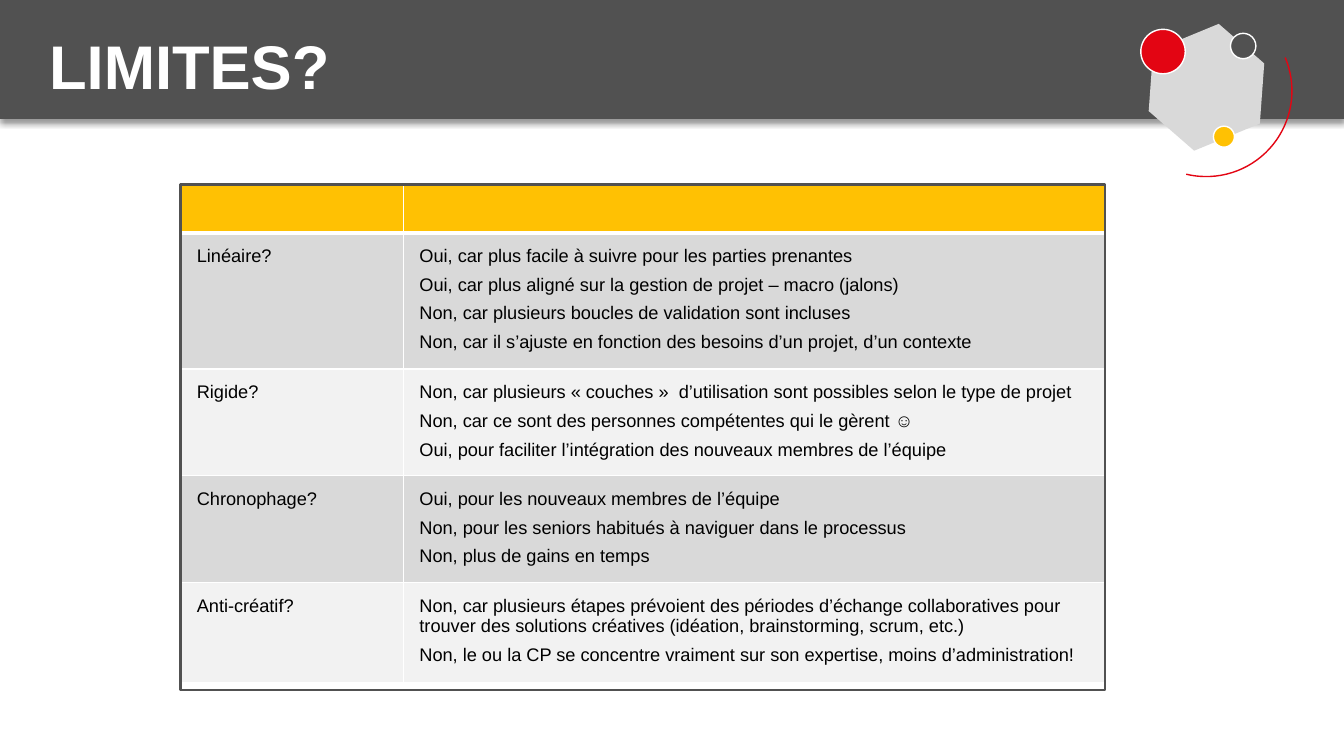
import lxml.etree
import pptx
import pptx.dml.color
import pptx.enum.shapes
import pptx.oxml.ns
import pptx.util

Cm = pptx.util.Cm
Pt = pptx.util.Pt
SHAPES = pptx.enum.shapes.MSO_SHAPE

RED, YELLOW, WHITE, BLACK = "E30513", "FFC103", "FFFFFF", "000000"
DARK, GREY, LIGHT = "515151", "D9D9D9", "F2F2F2"

LIMITS = [
    ("Linéaire?", [
        "Oui, car plus facile à suivre pour les parties prenantes",
        "Oui, car plus aligné sur la gestion de projet – macro (jalons)",
        "Non, car plusieurs boucles de validation sont incluses",
        "Non, car il s’ajuste en fonction des besoins d’un projet, d’un contexte",
    ]),
    ("Rigide?", [
        "Non, car plusieurs « couches »  d’utilisation sont possibles selon le type de projet",
        "Non, car ce sont des personnes compétentes qui le gèrent ☺",
        "Oui, pour faciliter l’intégration des nouveaux membres de l’équipe",
    ]),
    ("Chronophage?", [
        "Oui, pour les nouveaux membres de l’équipe",
        "Non, pour les seniors habitués à naviguer dans le processus",
        "Non, plus de gains en temps",
    ]),
    ("Anti-créatif?", [
        "Non, car plusieurs étapes prévoient des périodes d’échange collaboratives pour "
        "trouver des solutions créatives (idéation, brainstorming, scrum, etc.)",
        "Non, le ou la CP se concentre vraiment sur son expertise, moins d’administration!",
    ]),
]


def color(value):
    return pptx.dml.color.RGBColor.from_string(value)


def add_xml(parent, tag, **attributes):
    element = lxml.etree.SubElement(parent, pptx.oxml.ns.qn(tag))
    for name, value in attributes.items():
        element.set(name, str(value))
    return element


class SlideBuilder:
    font = "Arial"

    def __init__(self, slide):
        self.slide = slide

    def shape(self, kind, left, top, width, height, fill=None, line=None,
              line_width=1, rotation=0, flip=False, group=None):
        shapes = group.shapes if group else self.slide.shapes
        shape = shapes.add_shape(kind, Cm(left), Cm(top), Cm(width), Cm(height))
        shape.shadow.inherit = False
        shape.rotation = rotation
        if flip:
            shape.element.spPr.find(pptx.oxml.ns.qn("a:xfrm")).set("flipH", "1")
        if fill:
            shape.fill.solid()
            shape.fill.fore_color.rgb = color(fill)
        else:
            shape.fill.background()
        if line:
            shape.line.color.rgb = color(line)
            shape.line.width = Pt(line_width)
        else:
            shape.line.fill.background()
        return shape

    def drop_shadow(self, shape, blur, distance, opacity):
        effects = shape.element.spPr.find(pptx.oxml.ns.qn("a:effectLst"))
        shadow = add_xml(effects, "a:outerShdw", blurRad=Pt(blur), dist=Pt(distance),
                         dir=90 * 60000, algn="t", rotWithShape=0)
        shade = add_xml(shadow, "a:srgbClr", val=BLACK)
        add_xml(shade, "a:alpha", val=opacity * 1000)

    def run(self, paragraph, text, size, text_color, bold=False):
        run = paragraph.add_run()
        run.text = text
        run.font.name = self.font
        run.font.size = Pt(size)
        run.font.bold = bold
        run.font.color.rgb = color(text_color)

    def title(self, text, left, top, width, height):
        box = self.slide.shapes.add_textbox(Cm(left), Cm(top), Cm(width), Cm(height))
        box.text_frame.word_wrap = True
        paragraph = box.text_frame.paragraphs[0]
        paragraph.line_spacing = 0.9
        self.run(paragraph, text, 44, WHITE, bold=True)

    def cell(self, cell, lines, fill, top_border=1, bottom_border=1):
        # Borders come before the fill in the cell properties
        properties = cell._tc.get_or_add_tcPr()
        widths = {"a:lnL": 1, "a:lnR": 1, "a:lnT": top_border, "a:lnB": bottom_border}
        for tag, width in widths.items():
            border = add_xml(properties, tag, w=Pt(width))
            add_xml(add_xml(border, "a:solidFill"), "a:srgbClr", val=WHITE)
        cell.fill.solid()
        cell.fill.fore_color.rgb = color(fill)
        cell.margin_left, cell.margin_right = Cm(0.41), Cm(0.2)
        cell.margin_top = cell.margin_bottom = Cm(0.33)
        frame = cell.text_frame
        for index, line in enumerate(lines):
            paragraph = frame.add_paragraph() if index else frame.paragraphs[0]
            paragraph.space_after = Pt(6)
            self.run(paragraph, line, 13, BLACK)

    def table(self, limits, left, top, widths, heights):
        table = self.slide.shapes.add_table(
            len(heights), len(widths), Cm(left), Cm(top),
            Cm(sum(widths)), Cm(sum(heights))).table
        table.horz_banding = False
        for column, width in zip(table.columns, widths):
            column.width = Cm(width)
        for row, height in zip(table.rows, heights):
            row.height = Cm(height)
        for cell in table.rows[0].cells:
            self.cell(cell, [], YELLOW, bottom_border=3)
            cell.margin_top = cell.margin_bottom = Cm(0.13)
        for index, (label, answers) in enumerate(limits, start=1):
            fill = GREY if index % 2 else LIGHT
            top_border = 3 if index == 1 else 1
            for column, lines in enumerate([[label], answers]):
                self.cell(table.cell(index, column), lines, fill, top_border)

    def emblem(self):
        group = self.slide.shapes.add_group_shape()
        self.shape(SHAPES.HEXAGON, 28.83, 0.84, 3.15, 2.72, GREY,
                   rotation=337.6, flip=True, group=group)
        for left, top, size, fill in [(28.75, 0.74, 1.12, RED),
                                      (30.58, 3.18, 0.53, YELLOW),
                                      (31.01, 0.84, 0.64, DARK)]:
            self.shape(SHAPES.OVAL, left, top, size, size, fill, WHITE, group=group)
        arc = self.shape(SHAPES.ARC, 28.24, 0.13, 4.32, 4.32, line=RED,
                         rotation=215, flip=True, group=group)
        arc.adjustments[0] = 174.88
        arc.adjustments[1] = 34.74


def main():
    presentation = pptx.Presentation()
    presentation.slide_width, presentation.slide_height = Cm(33.87), Cm(19.05)
    builder = SlideBuilder(presentation.slides.add_slide(presentation.slide_layouts[6]))

    # Table of limits
    builder.table(LIMITS, 4.55, 4.65, [5.61, 17.68], [1.22, 3.43, 2.69, 2.69, 2.51])

    # Header band, emblem and title
    band = builder.shape(SHAPES.RECTANGLE, 0, 0, 33.87, 3, DARK)
    builder.drop_shadow(band, blur=4, distance=3, opacity=40)
    builder.emblem()
    builder.title("LIMITES?", 0.99, 0.79, 27.05, 2.29)

    # Frame around the table
    builder.shape(SHAPES.RECTANGLE, 4.55, 4.65, 23.29, 12.73, line=DARK, line_width=1.5)

    presentation.save("out.pptx")


if __name__ == "__main__":
    main()
